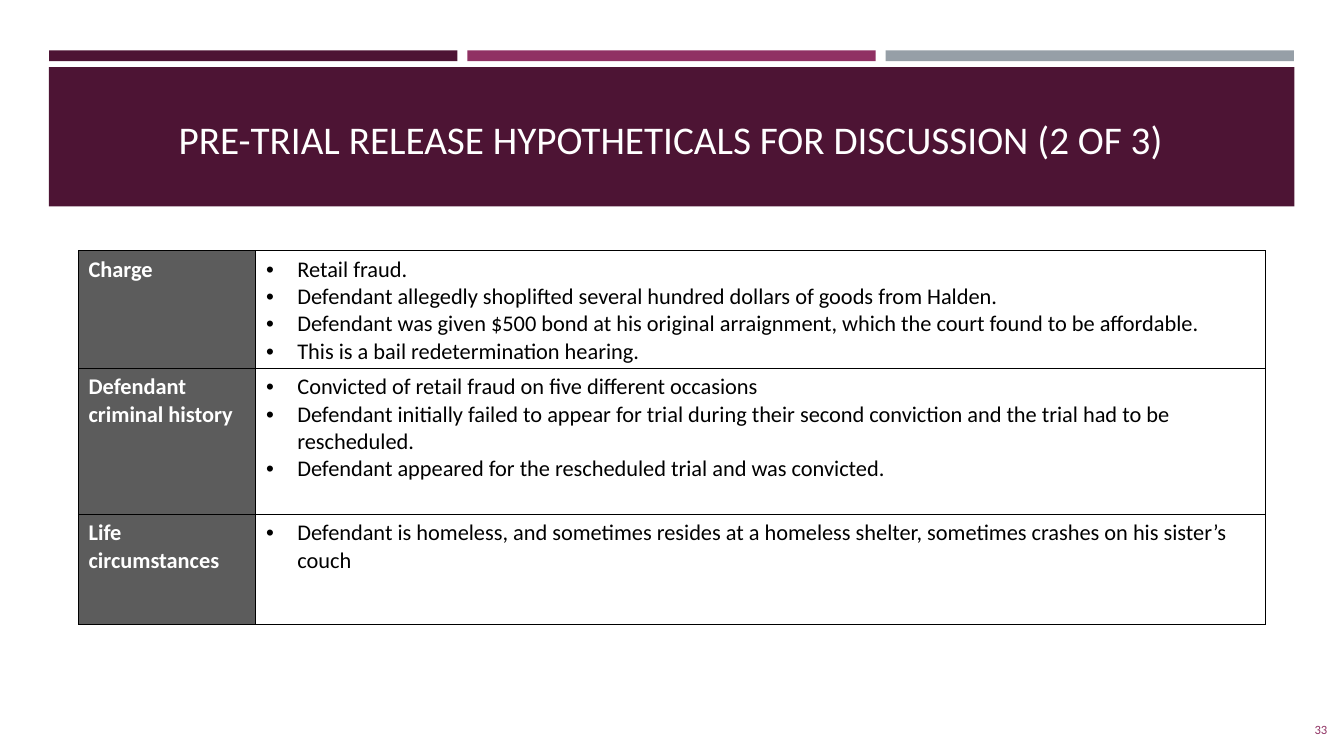
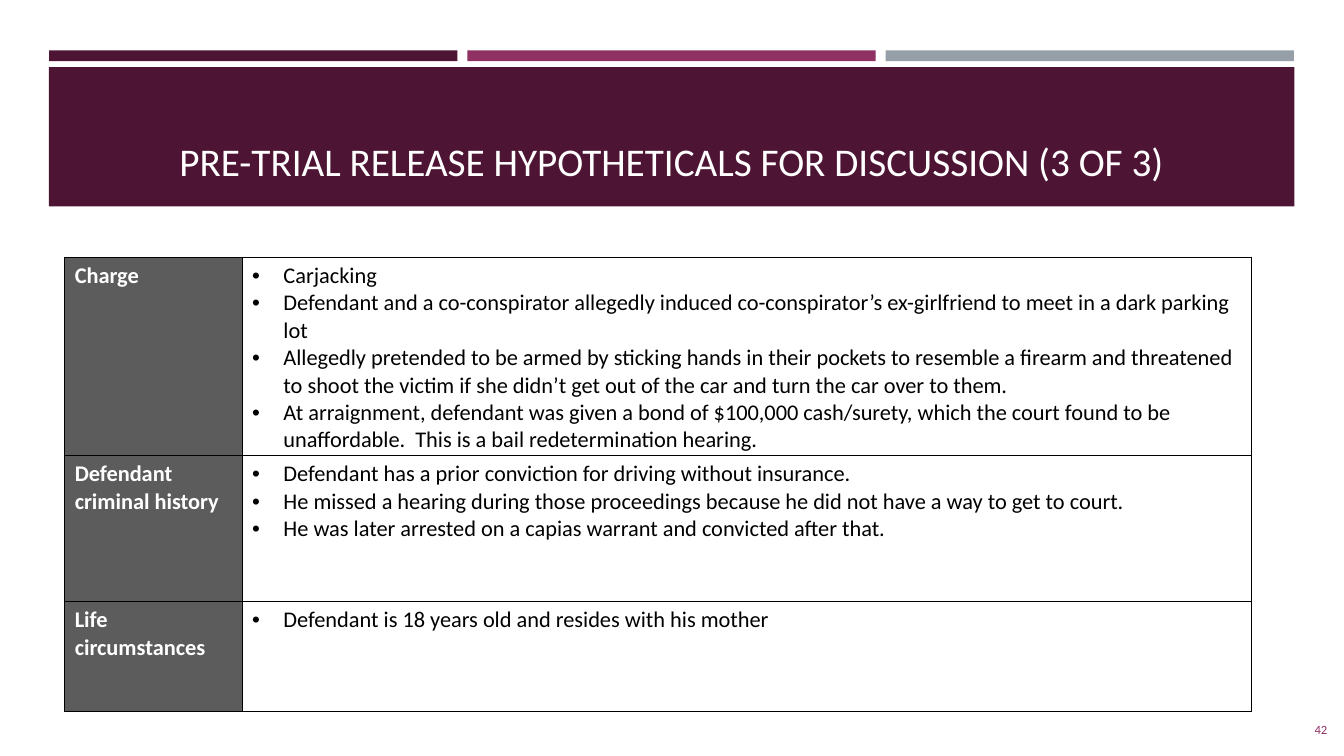
"""Build two slides of pre-trial release hypotheticals."""
from dataclasses import dataclass
from typing import NamedTuple

from lxml.etree import SubElement
from pptx import Presentation
from pptx.dml.color import RGBColor
from pptx.enum.shapes import MSO_SHAPE as Preset
from pptx.enum.text import MSO_ANCHOR as Anchor, PP_ALIGN as Align
from pptx.oxml.ns import qn
from pptx.slide import Slide
from pptx.table import _Cell as Cell
from pptx.text.text import _Paragraph as Paragraph
from pptx.util import Cm, Pt

PLUM = RGBColor(0x4D, 0x14, 0x34)
MAGENTA = RGBColor(0x90, 0x31, 0x63)
SILVER = RGBColor(0x96, 0x9F, 0xA7)
CHARCOAL = RGBColor(0x5C, 0x5C, 0x5C)
WHITE = RGBColor(0xFF, 0xFF, 0xFF)
BLACK = RGBColor(0x00, 0x00, 0x00)

ACCENT_LEFT, ACCENT_PITCH = 1.24, 10.54
COLUMN_WIDTHS = (4.47, 25.43)
ROW_HEIGHTS = (2.26, 3.68, 2.77)
TOPICS = ("Charge", "Defendant criminal history", "Life circumstances")
BULLET_INDENT = Cm(0.79)


class Box(NamedTuple):
    left: float
    top: float
    width: float
    height: float

    def lengths(self) -> list[Cm]:
        return [Cm(value) for value in self]


@dataclass(frozen=True)
class TextStyle:
    size: int
    color: RGBColor
    bold: bool = False
    align: Align = Align.LEFT
    anchor: Anchor = Anchor.TOP


TITLE = TextStyle(28, WHITE, align=Align.CENTER, anchor=Anchor.BOTTOM)
PAGE_NUMBER = TextStyle(9, MAGENTA, align=Align.RIGHT, anchor=Anchor.MIDDLE)
TOPIC = TextStyle(16, WHITE, bold=True)
FACT = TextStyle(16, BLACK)


@dataclass(frozen=True)
class Hypothetical:
    number: int
    page: int
    title_left: float
    title_top: float
    table_left: float
    table_top: float
    facts: tuple[tuple[str, ...], ...]


HYPOTHETICALS = (
    Hypothetical(2, 33, 1.58, 1.47, 1.98, 6.32, (
        ("Retail fraud.",
         "Defendant allegedly shoplifted several hundred dollars of goods from Halden.",
         "Defendant was given $500 bond at his original arraignment, which the court found to be affordable.",
         "This is a bail redetermination hearing."),
        ("Convicted of retail fraud on five different occasions",
         "Defendant initially failed to appear for trial during their second conviction and the trial "
         "had to be rescheduled.",
         "Defendant appeared for the rescheduled trial and was convicted."),
        ("Defendant is homeless, and sometimes resides at a homeless shelter, sometimes crashes on "
         "his sister’s couch",),
    )),
    Hypothetical(3, 42, 1.6, 2.03, 1.63, 6.48, (
        ("Carjacking",
         "Defendant and a co-conspirator allegedly induced co-conspirator’s ex-girlfriend to meet in "
         "a dark parking lot",
         "Allegedly pretended to be armed by sticking hands in their pockets to resemble a firearm and "
         "threatened to shoot the victim if she didn’t get out of the car and turn the car over to them.",
         "At arraignment, defendant was given a bond of $100,000 cash/surety, which the court found to "
         "be unaffordable.  This is a bail redetermination hearing."),
        ("Defendant has a prior conviction for driving without insurance.",
         "He missed a hearing during those proceedings because he did not have a way to get to court.",
         "He was later arrested on a capias warrant and convicted after that."),
        ("Defendant is 18 years old and resides with his mother",),
    )),
)


def write(paragraph: Paragraph, text: str, style: TextStyle) -> None:
    paragraph.alignment = style.align
    run = paragraph.add_run()
    run.text = text
    font_format = {"name": "Calibri", "size": Pt(style.size), "bold": style.bold}
    for attribute, value in font_format.items():
        setattr(run.font, attribute, value)
    run.font.color.rgb = style.color


def add_band(slide: Slide, box: Box, color: RGBColor) -> None:
    band = slide.shapes.add_shape(Preset.RECTANGLE, *box.lengths())
    band.shadow.inherit = False
    band.fill.solid()
    band.fill.fore_color.rgb = color
    band.line.fill.background()


def add_label(slide: Slide, box: Box, text: str, style: TextStyle) -> None:
    frame = slide.shapes.add_textbox(*box.lengths()).text_frame
    frame.word_wrap = True
    frame.vertical_anchor = style.anchor
    write(frame.paragraphs[0], text, style)


def add_bullet(paragraph: Paragraph) -> None:
    properties = paragraph._p.get_or_add_pPr()
    properties.set("marL", str(BULLET_INDENT))
    properties.set("indent", str(-BULLET_INDENT))
    SubElement(properties, qn("a:buFont"), typeface="Arial")
    SubElement(properties, qn("a:buChar"), char="•")


def format_cell(cell: Cell, color: RGBColor) -> None:
    properties = cell._tc.get_or_add_tcPr()
    for side in ("a:lnL", "a:lnR", "a:lnT", "a:lnB"):
        border = SubElement(properties, qn(side), w=str(Pt(0.75)))
        border_fill = SubElement(border, qn("a:solidFill"))
        SubElement(border_fill, qn("a:srgbClr"), val=str(BLACK))
    cell.fill.solid()
    cell.fill.fore_color.rgb = color


def add_case_table(slide: Slide, case: Hypothetical) -> None:
    box = Box(case.table_left, case.table_top, sum(COLUMN_WIDTHS), sum(ROW_HEIGHTS))
    table = slide.shapes.add_table(len(TOPICS), len(COLUMN_WIDTHS), *box.lengths()).table
    for flag, value in {"first_row": False, "horz_banding": False}.items():
        setattr(table, flag, value)
    for column, width in zip(table.columns, COLUMN_WIDTHS):
        column.width = Cm(width)
    for row, height, topic, facts in zip(table.rows, ROW_HEIGHTS, TOPICS, case.facts):
        row.height = Cm(height)
        topic_cell, facts_cell = row.cells
        format_cell(topic_cell, CHARCOAL)
        format_cell(facts_cell, WHITE)
        write(topic_cell.text_frame.paragraphs[0], topic, TOPIC)
        frame = facts_cell.text_frame
        for index, fact in enumerate(facts):
            paragraph = frame.add_paragraph() if index else frame.paragraphs[0]
            add_bullet(paragraph)
            write(paragraph, fact, FACT)


def add_frame(slide: Slide, case: Hypothetical) -> None:
    for index, color in enumerate((PLUM, MAGENTA, SILVER)):
        add_band(slide, Box(ACCENT_LEFT + index * ACCENT_PITCH, 1.27, 10.29, 0.27), color)
    add_band(slide, Box(1.23, 1.69, 31.39, 3.51), PLUM)
    title = f"PRE-TRIAL RELEASE HYPOTHETICALS FOR DISCUSSION ({case.number} OF 3)"
    add_label(slide, Box(case.title_left, case.title_top, 30.63, 2.74), title, TITLE)
    add_label(slide, Box(30.78, 17.86, 2.92, 1.02), str(case.page), PAGE_NUMBER)


def main() -> None:
    deck = Presentation()
    deck.slide_width, deck.slide_height = Cm(33.87), Cm(19.05)
    blank = deck.slide_layouts[6]
    for case in HYPOTHETICALS:
        slide = deck.slides.add_slide(blank)
        add_frame(slide, case)
        add_case_table(slide, case)
    deck.save("out.pptx")


if __name__ == "__main__":
    main()
